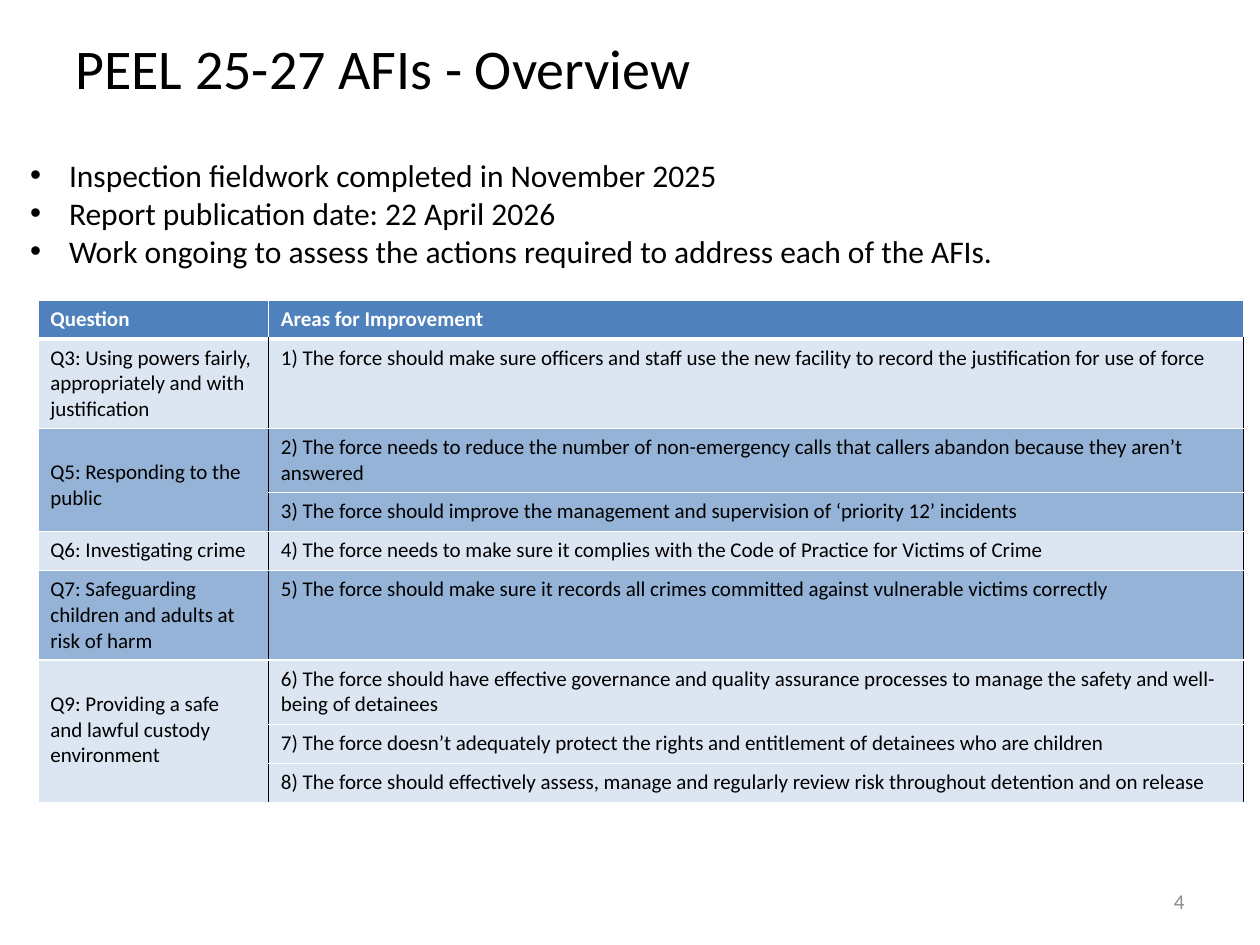
"""Build the inspection overview slide with its table of areas for improvement."""
from lxml import etree
from pptx import Presentation, util as u
from pptx.dml import color
from pptx.enum import text
from pptx.oxml import ns

WIDTH, HEIGHT = 10, 7.5
BLACK, WHITE, GREY = "000000", "FFFFFF", "8C8C8C"
HEADER, LIGHT, MID = "4F81BD", "DCE6F2", "95B3D7"
LINE_HEIGHT = 0.2


def style(frame, size, hex_color, bold=False):
    for paragraph in frame.paragraphs:
        for run in paragraph.runs:
            run.font.name = "Calibri"
            run.font.size = u.Pt(size)
            run.font.bold = bold
            run.font.color.rgb = color.RGBColor.from_string(hex_color)


def add_text(left, top, width, height, words, size, hex_color):
    box = slide.shapes.add_textbox(*map(u.Inches, (left, top, width, height)))
    box.text_frame.word_wrap = True
    box.text_frame.text = words
    style(box.text_frame, size, hex_color)
    return box.text_frame


presentation = Presentation()
presentation.slide_width, presentation.slide_height = u.Inches(WIDTH), u.Inches(HEIGHT)
slide = presentation.slides.add_slide(presentation.slide_layouts[6])

title = add_text(0.05 * WIDTH, 0.04 * HEIGHT, 7.91, 0.46, "PEEL 25-27 AFIs - Overview", 32, BLACK)
title.vertical_anchor = text.MSO_ANCHOR.MIDDLE

questions = [
    ("Question", HEADER, ["Areas for Improvement"], 1),
    ("Q3: Using powers fairly, appropriately and with justification", LIGHT, [
        "1) The force should make sure officers and staff use the new facility to record the justification for use of force",
    ], 3),
    ("Q5: Responding to the public", MID, [
        "2) The force needs to reduce the number of non-emergency calls that callers abandon because they aren’t answered",
        "3) The force should improve the management and supervision of ‘priority 12’ incidents",
    ], 2),
    ("Q6: Investigating crime", LIGHT, [
        "4) The force needs to make sure it complies with the Code of Practice for Victims of Crime",
    ], 1),
    ("Q7: Safeguarding children and adults at risk of harm", MID, [
        "5) The force should make sure it records all crimes committed against vulnerable victims correctly",
    ], 3),
    ("Q9: Providing a safe and lawful custody environment", LIGHT, [
        "6) The force should have effective governance and quality assurance processes to manage the safety and well-being of detainees",
        "7) The force doesn’t adequately protect the rights and entitlement of detainees who are children",
        "8) The force should effectively assess, manage and regularly review risk throughout detention and on release",
    ], 2),
]
row_count = sum(len(areas) for _, _, areas, _ in questions)
table = slide.shapes.add_table(
    row_count, 2, u.Inches(0.3), u.Inches(2.38), u.Inches(9.57), u.Inches(3.99)
).table
table.horz_banding = False
table.columns[0].width, table.columns[1].width = u.Inches(1.83), u.Inches(7.74)

row = 0
for question, fill, areas, first_lines in questions:
    is_header = fill == HEADER
    for offset, area in enumerate(areas):
        lines = first_lines if offset == 0 else 1
        table.rows[row + offset].height = u.Inches(0.11 + lines * LINE_HEIGHT)
        for column, words in enumerate((question if offset == 0 else "", area)):
            cell = table.cell(row + offset, column)
            cell.text_frame.text = words
            style(cell.text_frame, 12, WHITE if is_header else BLACK, is_header)
            inner = WHITE if is_header else BLACK
            edges = {"L": inner if column else WHITE, "R": inner, "T": WHITE, "B": WHITE}
            properties = cell._tc.get_or_add_tcPr()
            for side, edge_color in edges.items():
                points = 3 if is_header and side == "B" else 1
                border = etree.SubElement(properties, ns.qn(f"a:ln{side}"), w=str(u.Pt(points)))
                solid = etree.SubElement(border, ns.qn("a:solidFill"))
                etree.SubElement(solid, ns.qn("a:srgbClr"), val=edge_color)
            cell.fill.solid()
            cell.fill.fore_color.rgb = color.RGBColor.from_string(fill)
    if len(areas) > 1:
        question_cell = table.cell(row, 0)
        question_cell.merge(table.cell(row + len(areas) - 1, 0))
        question_cell.margin_top = u.Inches(0.05 + LINE_HEIGHT)
    row += len(areas)

points = "\n".join([
    "Inspection fieldwork completed in November 2025",
    "Report publication date: 22 April 2026",
    "Work ongoing to assess the actions required to address each of the AFIs.",
])
summary = add_text(0.14, 1.19, 9.73, 1.01, points, 18, BLACK)
for paragraph in summary.paragraphs:
    properties = paragraph._p.get_or_add_pPr()
    properties.set("marL", str(u.Inches(0.31)))
    properties.set("indent", str(-u.Inches(0.31)))
    etree.SubElement(properties, ns.qn("a:buFont"), typeface="Arial")
    etree.SubElement(properties, ns.qn("a:buChar"), char="•")

number = add_text(7.17, 6.95, 2.33, 0.4, "4", 12, GREY)
number.vertical_anchor = text.MSO_ANCHOR.MIDDLE
number.paragraphs[0].alignment = text.PP_ALIGN.RIGHT

presentation.save("out.pptx")
